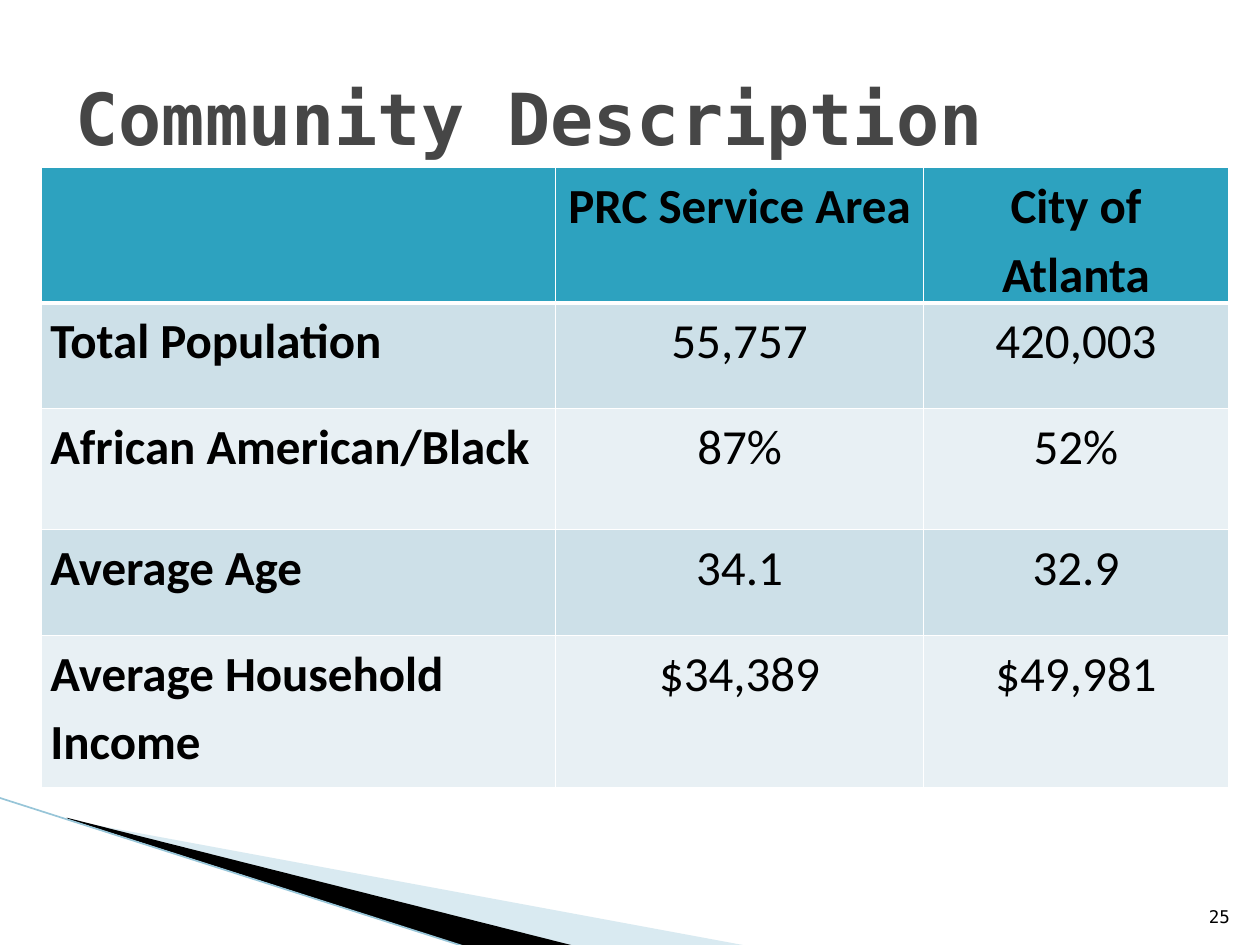
"""Build the Community Description slide with its demographic table."""
from lxml import etree
from pptx import Presentation
from pptx import util as u
from pptx.dml import color
from pptx.enum import shapes, text
from pptx.oxml import ns

MONO = "DejaVu Sans Mono"
LEFT, CENTER, RIGHT = text.PP_ALIGN.LEFT, text.PP_ALIGN.CENTER, text.PP_ALIGN.RIGHT
COLUMN_WIDTHS = [4.08, 2.92, 2.42]
ROW_HEIGHTS = [1, 0.84, 0.96, 0.84, 1.21]
COMMUNITY = [
    ["", "PRC Service Area", "City of Atlanta"],
    ["Total Population", "55,757", "420,003"],
    ["African American/Black", "87%", "52%"],
    ["Average Age", "34.1", "32.9"],
    ["Average Household Income", "$34,389", "$49,981"],
]


def rgb(value):
    return color.RGBColor.from_string(value)


def write(frame, words, font=MONO, size=10, ink="000000", bold=False,
          align=LEFT, anchor=None, spacing=None, after=None):
    frame.word_wrap = True
    if anchor is not None:
        frame.vertical_anchor = anchor
    paragraph = frame.paragraphs[0]
    paragraph.alignment = align
    paragraph.line_spacing = spacing
    if after is not None:
        paragraph.space_after = u.Pt(after)
    run = paragraph.add_run()
    run.text = words
    run.font.name, run.font.size, run.font.bold = font, u.Pt(size), bold
    run.font.color.rgb = rgb(ink)


def place(item, left, top, width, height):
    item.left, item.top = u.Inches(left), u.Inches(top)
    item.width, item.height = u.Inches(width), u.Inches(height)


class Deck:
    header, bands, rule = "2DA2BF", ["E8F0F4", "CDE0E8"], "FFFFFF"

    def __init__(self):
        self.file = Presentation()
        self.file.slide_width, self.file.slide_height = u.Inches(10), u.Inches(7.5)
        self.slide = self.file.slides.add_slide(self.file.slide_layouts[5])

    def wedge(self, points, fill, opacity=None):
        start, *rest = [(u.Inches(x), u.Inches(y)) for x, y in points]
        outline = self.slide.shapes.build_freeform(*start)
        outline.add_line_segments(rest, close=True)
        wedge = outline.convert_to_shape()
        wedge.shadow.inherit = False
        wedge.line.fill.background()
        wedge.fill.solid()
        wedge.fill.fore_color.rgb = rgb(fill)
        if opacity is not None:
            tint = wedge.fill._xPr.find(".//" + ns.qn("a:srgbClr"))
            etree.SubElement(tint, ns.qn("a:alpha"), val=str(opacity * 1000))

    def line(self, start, end, ink, weight):
        edge = self.slide.shapes.add_connector(
            shapes.MSO_CONNECTOR.STRAIGHT, *map(u.Inches, start + end))
        edge.line.color.rgb = rgb(ink)
        edge.line.width = u.Pt(weight)
        etree.SubElement(edge._element.spPr, ns.qn("a:effectLst"))

    def title(self, words, box):
        heading = self.slide.shapes.title
        place(heading, *box)
        heading.text_frame.auto_size = text.MSO_AUTO_SIZE.NONE
        write(heading.text_frame, words, size=41, ink="464646", bold=True,
              anchor=text.MSO_ANCHOR.MIDDLE)

    def page_number(self, words, box):
        number = self.slide.shapes.add_textbox(*map(u.Inches, box))
        write(number.text_frame, words, align=RIGHT, anchor=text.MSO_ANCHOR.BOTTOM)

    def borders(self, cell, **weights):
        properties = cell._tc.get_or_add_tcPr()
        for side in "LRTB":
            border = etree.SubElement(properties, ns.qn(f"a:ln{side}"),
                                      w=str(u.Pt(weights.get(side, 1))))
            fill = etree.SubElement(border, ns.qn("a:solidFill"))
            etree.SubElement(fill, ns.qn("a:srgbClr"), val=self.rule)

    def table(self, rows, widths, heights, left, top):
        size = map(u.Inches, (left, top, sum(widths), sum(heights)))
        grid = self.slide.shapes.add_table(len(rows), len(widths), *size).table
        for column, width in zip(grid.columns, widths):
            column.width = u.Inches(width)
        for row, height in zip(grid.rows, heights):
            row.height = u.Inches(height)
        for r, row in enumerate(rows):
            for c, words in enumerate(row):
                cell = grid.cell(r, c)
                cell.margin_left = cell.margin_right = u.Inches(0.07)
                cell.margin_top = cell.margin_bottom = 0
                self.borders(cell, T=3 if r == 1 else 1, B=3 if r == 0 else 1)
                cell.fill.solid()
                cell.fill.fore_color.rgb = rgb(self.bands[r % 2] if r else self.header)
                if words:
                    write(cell.text_frame, words, font="Calibri", size=28,
                          bold=r == 0 or c == 0, align=CENTER if c else LEFT,
                          spacing=1.15, after=0.7)


def main():
    deck = Deck()
    deck.wedge([(0.55, 6.51), (5.95, 7.51), (4.56, 7.51), (0.55, 6.5)], "A0CBDC", 40)
    deck.wedge([(0.53, 6.49), (4.57, 7.51), (3.72, 7.52), (0.54, 6.5)], "000000")
    deck.line((-0.01, 6.33), (3.71, 7.52), "97C5D8", 0.95)
    deck.title("Community Description", (0.5, 0.3, 9, 1.25))
    deck.page_number("25", (9.46, 7.01, 0.4, 0.4))
    deck.table(COMMUNITY, COLUMN_WIDTHS, ROW_HEIGHTS, 0.33, 1.33)
    deck.file.save("out.pptx")


if __name__ == "__main__":
    main()
